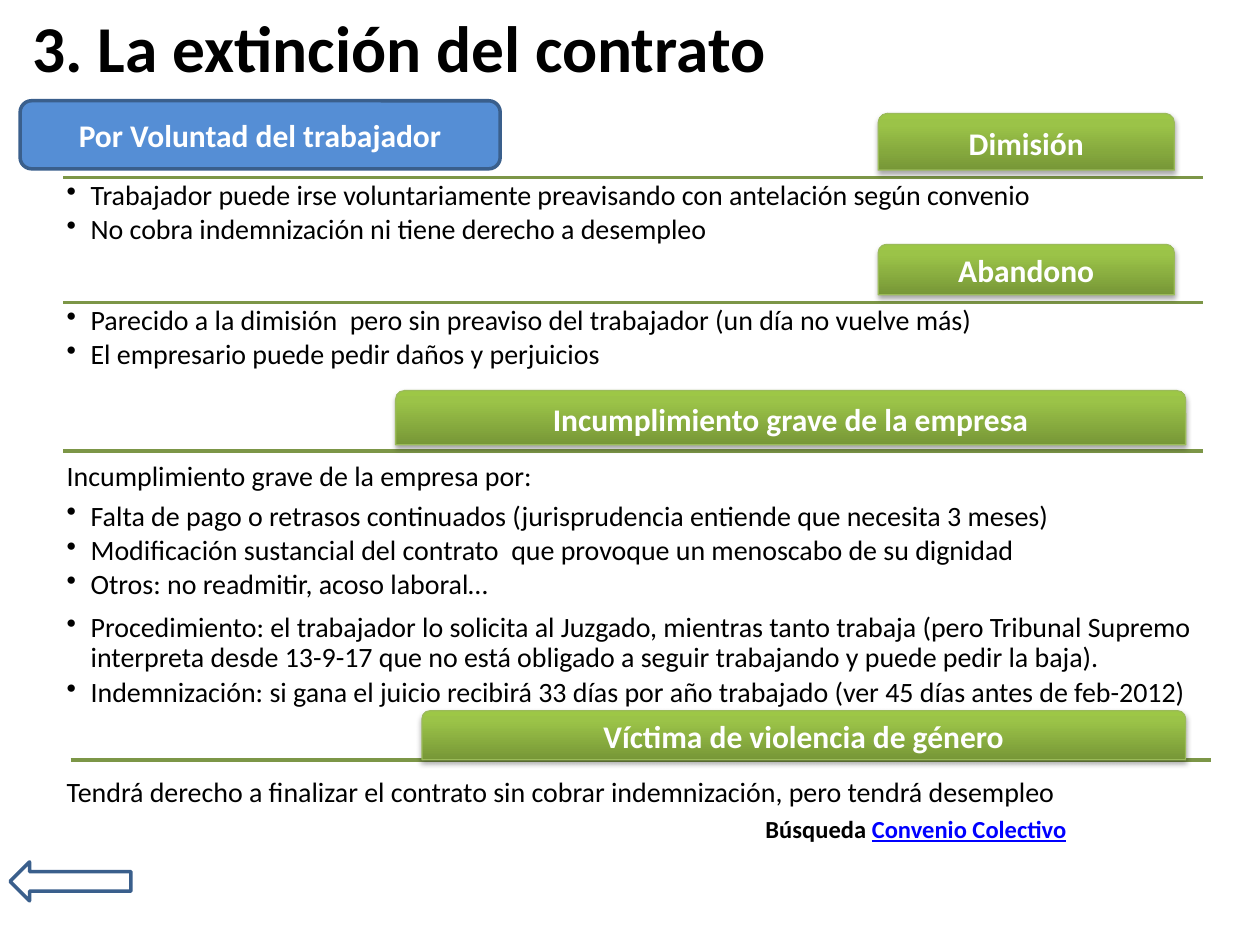
from dataclasses import dataclass

from lxml.etree import SubElement
from pptx import Presentation
from pptx.dml.color import RGBColor
from pptx.enum.shapes import MSO_CONNECTOR, MSO_SHAPE
from pptx.enum.text import MSO_ANCHOR, PP_ALIGN
from pptx.oxml.ns import qn
from pptx.util import Inches, Pt

COLUMN = Inches(0.1)
ROW = Inches(0.1)


@dataclass(frozen=True)
class Theme:
    font: str = "Calibri"
    black: str = "000000"
    white: str = "FFFFFF"
    blue: str = "558ED5"
    blue_edge: str = "3A5F8C"
    link: str = "0000FF"
    rule: str = "7C9647"
    banner_edge: str = "9BBB59"
    banner_stops: tuple = ((0, "779737"), (80, "9BC348"), (100, "9DC746"))
    title_size: float = 37.4
    banner_size: float = 18
    body_size: float = 16
    search_size: float = 14
    line_spacing: float = 0.9
    lead_gap: float = 5.6
    bullet_gap: float = 2.4


THEME = Theme()


@dataclass(frozen=True)
class Box:
    left: float
    top: float
    width: float
    height: float

    def place(self):
        return (round(self.left * COLUMN), round(self.top * ROW),
                round(self.width * COLUMN), round(self.height * ROW))


@dataclass(frozen=True)
class Body:
    box: Box
    bullets: tuple = ()
    lead: str = ""
    anchor: MSO_ANCHOR = MSO_ANCHOR.TOP


@dataclass(frozen=True)
class Section:
    name: str
    banner: Box
    rule: Box
    bodies: tuple


SECTIONS = (
    Section("Dimisión", Box(69.7, 9, 23.5, 4.5), Box(5, 14.1, 90.5, 0), (
        Body(Box(5, 14.1, 90.6, 11.8), (
            "Trabajador puede irse voluntariamente preavisando con antelación según convenio",
            "No cobra indemnización ni tiene derecho a desempleo")),)),
    Section("Abandono", Box(69.7, 19.4, 23.5, 4), Box(5, 24, 90.5, 0), (
        Body(Box(5, 24, 90.6, 11.8), (
            "Parecido a la dimisión  pero sin preaviso del trabajador (un día no vuelve más)",
            "El empresario puede pedir daños y perjuicios")),)),
    Section("Incumplimiento grave de la empresa",
            Box(31.4, 31, 62.7, 4.3), Box(5, 35.8, 90.5, 0), (
        Body(Box(5, 35.8, 90.6, 12.2), (
            "Falta de pago o retrasos continuados (jurisprudencia entiende que necesita 3 meses)",
            "Modificación sustancial del contrato  que provoque un menoscabo de su dignidad",
            "Otros: no readmitir, acoso laboral…"),
            "Incumplimiento grave de la empresa por:", MSO_ANCHOR.BOTTOM),
        Body(Box(5, 48.4, 90.6, 3.1), (
            "Procedimiento: el trabajador lo solicita al Juzgado, mientras tanto trabaja "
            "(pero Tribunal Supremo interpreta desde 13-9-17 que no está obligado a seguir "
            "trabajando y puede pedir la baja).",
            "Indemnización: si gana el juicio recibirá 33 días por año trabajado "
            "(ver 45 días antes de feb-2012)")))),
    Section("Víctima de violencia de género",
            Box(33.5, 56.4, 60.6, 3.9), Box(5.6, 60.3, 90.5, 0), (
        Body(Box(5, 58.6, 90.6, 5.9), (),
             "Tendrá derecho a finalizar el contrato sin cobrar indemnización, "
             "pero tendrá desempleo", MSO_ANCHOR.BOTTOM),)),
)


def color(value):
    return RGBColor.from_string(value)


def add_run(paragraph, text, size, tint, bold=False, underline=None):
    run = paragraph.add_run()
    run.text = text
    run.font.name = THEME.font
    run.font.size = Pt(size)
    run.font.bold = bold
    run.font.underline = underline
    run.font.color.rgb = color(tint)


def prepare_frame(shape, anchor, inset=None):
    frame = shape.text_frame
    frame.word_wrap = True
    frame.vertical_anchor = anchor
    if inset is not None:
        frame.margin_left = frame.margin_right = inset
        frame.margin_top = frame.margin_bottom = inset
    return frame


def add_outlined(slide, kind, box, edge, width):
    shape = slide.shapes.add_shape(kind, *box.place())
    shape.shadow.inherit = False
    shape.line.color.rgb = color(edge)
    shape.line.width = Pt(width)
    return shape


def add_title(slide, box, text):
    shape = slide.shapes.add_textbox(*box.place())
    paragraph = prepare_frame(shape, MSO_ANCHOR.MIDDLE).paragraphs[0]
    add_run(paragraph, text, THEME.title_size, THEME.black, bold=True)


def add_topic(slide, box, text):
    shape = add_outlined(slide, MSO_SHAPE.ROUNDED_RECTANGLE, box, THEME.blue_edge, 2)
    shape.fill.solid()
    shape.fill.fore_color.rgb = color(THEME.blue)
    paragraph = prepare_frame(shape, MSO_ANCHOR.MIDDLE).paragraphs[0]
    paragraph.alignment = PP_ALIGN.CENTER
    add_run(paragraph, text, THEME.banner_size, THEME.white, bold=True)


def add_back_arrow(slide, box):
    arrow = add_outlined(slide, MSO_SHAPE.LEFT_ARROW, box, THEME.blue_edge, 2)
    arrow.fill.background()


def add_color(parent, value):
    return SubElement(parent, qn("a:srgbClr"), val=value)


def add_rule(slide, box):
    left, top, width, _ = box.place()
    rule = slide.shapes.add_connector(MSO_CONNECTOR.STRAIGHT, left, top, left + width, top)
    rule.line.color.rgb = color(THEME.rule)
    rule.line.width = Pt(2)
    SubElement(rule._element.spPr, qn("a:effectLst"))


def add_banner(slide, box, text):
    shape = add_outlined(slide, MSO_SHAPE.ROUND_2_SAME_RECTANGLE, box, THEME.banner_edge, 0.75)
    shape.fill.gradient()
    shape.fill.gradient_angle = 90
    properties = shape._element.spPr
    stops = properties.find(qn("a:gradFill")).find(qn("a:gsLst"))
    for stop in list(stops):
        stops.remove(stop)
    for position, value in THEME.banner_stops:
        add_color(SubElement(stops, qn("a:gs"), pos=str(position * 1000)), value)
    shadow = SubElement(properties.find(qn("a:effectLst")), qn("a:outerShdw"),
                        blurRad=str(Pt(3.1)), dist=str(Pt(1.8)), dir="5400000", rotWithShape="0")
    SubElement(add_color(shadow, THEME.black), qn("a:alpha"), val="35000")
    frame = prepare_frame(shape, MSO_ANCHOR.MIDDLE, Inches(0.04))
    frame.margin_top = Inches(0.07)
    paragraph = frame.paragraphs[0]
    paragraph.alignment = PP_ALIGN.CENTER
    paragraph.line_spacing = THEME.line_spacing
    add_run(paragraph, text, THEME.banner_size, THEME.white, bold=True)


def add_body(slide, body):
    shape = slide.shapes.add_textbox(*body.box.place())
    frame = prepare_frame(shape, body.anchor, Inches(0.03))
    lines = [(body.lead, False)] if body.lead else []
    lines += [(text, True) for text in body.bullets]
    for index, (text, bulleted) in enumerate(lines):
        paragraph = frame.add_paragraph() if index else frame.paragraphs[0]
        paragraph.line_spacing = THEME.line_spacing
        paragraph.space_after = Pt(THEME.bullet_gap if bulleted else THEME.lead_gap)
        if bulleted:
            paragraph.level = 1
            properties = paragraph._p.get_or_add_pPr()
            properties.set("marL", str(Inches(0.19)))
            properties.set("indent", str(-Inches(0.19)))
            SubElement(properties, qn("a:buChar"), char="•")
        add_run(paragraph, text, THEME.body_size, THEME.black)


def add_section(slide, section):
    add_rule(slide, section.rule)
    for body in section.bodies:
        add_body(slide, body)
    add_banner(slide, section.banner, section.name)


def add_search(slide, box):
    shape = slide.shapes.add_textbox(*box.place())
    paragraph = prepare_frame(shape, MSO_ANCHOR.TOP).paragraphs[0]
    paragraph.alignment = PP_ALIGN.CENTER
    add_run(paragraph, "Búsqueda ", THEME.search_size, THEME.black, bold=True)
    add_run(paragraph, "Convenio Colectivo", THEME.search_size, THEME.link, True, True)


def main():
    presentation = Presentation()
    presentation.slide_width = 100 * COLUMN
    presentation.slide_height = 75 * ROW
    slide = presentation.slides.add_slide(presentation.slide_layouts[6])
    add_title(slide, Box(1.6, 0.5, 90, 6.3), "3. La extinción del contrato")
    add_back_arrow(slide, Box(0.8, 68.4, 9.6, 3.1))
    add_topic(slide, Box(1.6, 8, 38.1, 5.4), "Por Voluntad del trabajador")
    for section in SECTIONS:
        add_section(slide, section)
    add_search(slide, Box(54.2, 64.1, 37, 3.4))
    presentation.save("out.pptx")


if __name__ == "__main__":
    main()
